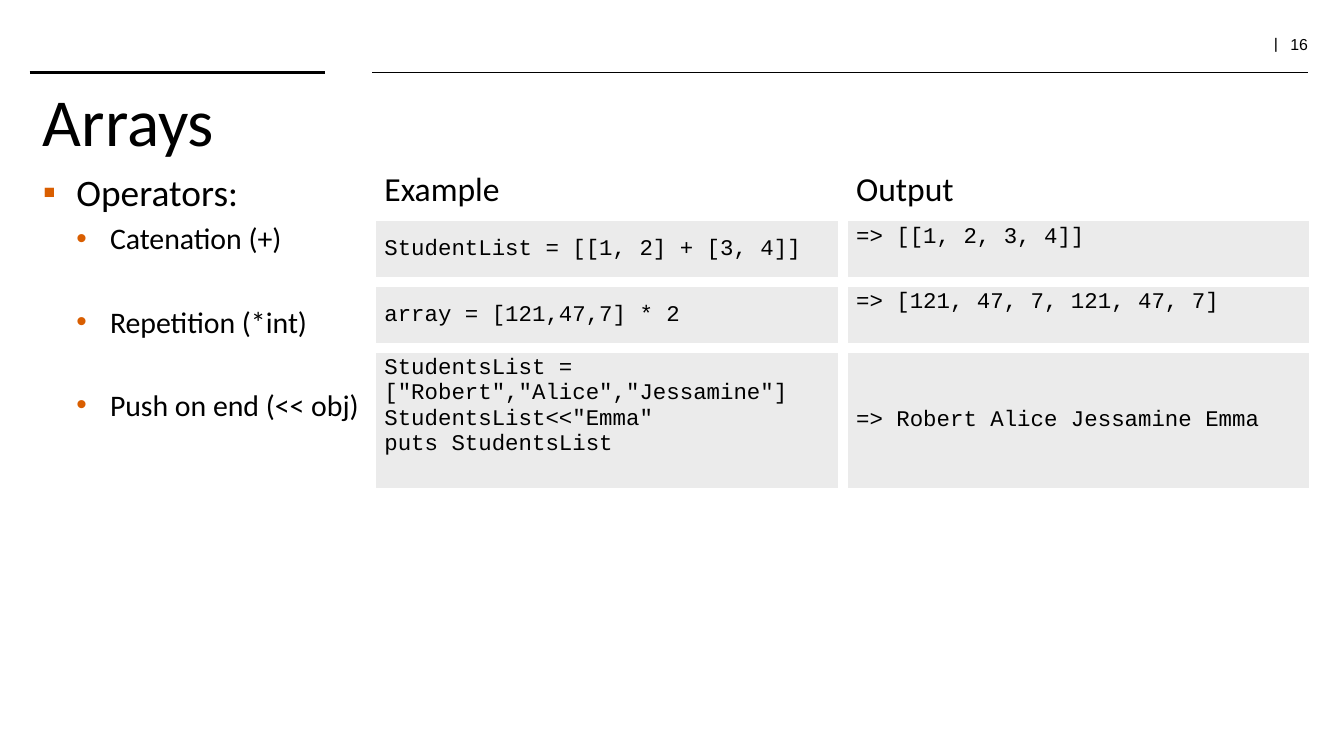
"""Build the slide on array operators."""
import pptx
import pptx.util
import pptx.dml.color
import pptx.enum.shapes
import pptx.enum.text
import pptx.oxml
import pptx.oxml.ns

Inches = pptx.util.Inches
Pt = pptx.util.Pt
Anchor = pptx.enum.text.MSO_ANCHOR
BLACK, WHITE, GREY, ORANGE = "000000", "FFFFFF", "EBEBEB", "D95E00"
BODY, CODE = "Calibri", "Courier New"
NS = pptx.oxml.ns.nsdecls("a")


def color(code):
    """Turn a hex string into a colour."""
    return pptx.dml.color.RGBColor.from_string(code)


def add_run(para, text, size, font=BODY):
    """Add one plain black run."""
    run = para.add_run()
    run.text = text
    run.font.size = Pt(size)
    run.font.name = font
    run.font.bold = False
    run.font.color.rgb = color(BLACK)


def add_box(slide, left, top, width, height):
    """Add a wrapping text box and return its text frame."""
    box = slide.shapes.add_textbox(*map(Inches, (left, top, width, height)))
    box.text_frame.word_wrap = True
    return box.text_frame


def add_rule(slide, left, right, top, width):
    """Draw a level black line."""
    line = slide.shapes.add_connector(
        pptx.enum.shapes.MSO_CONNECTOR.STRAIGHT,
        Inches(left), Inches(top), Inches(right), Inches(top))
    line.line.color.rgb = color(BLACK)
    line.line.width = Pt(width)
    props = line._element.spPr
    props.append(pptx.oxml.parse_xml(f"<a:effectLst {NS}/>"))


def add_bullet(para, text, level, mark, size, before):
    """Write a paragraph with a hanging orange bullet."""
    props = para._p.get_or_add_pPr()
    props.set("marL", str(Inches(0.25 * (level + 1))))
    props.set("indent", str(Inches(-0.25)))
    for xml in (f'<a:buClr {NS}><a:srgbClr val="{ORANGE}"/></a:buClr>',
                f'<a:buFont {NS} typeface="Arial"/>',
                f'<a:buChar {NS} char="{mark}"/>'):
        props.append(pptx.oxml.parse_xml(xml))
    para.level = level
    para.space_before = Pt(before)
    add_run(para, text, size)


def add_edges(cell):
    """Give a cell thick white borders on all sides."""
    props = cell._tc.get_or_add_tcPr()
    for spot, side in enumerate("LRTB"):
        props.insert(spot, pptx.oxml.parse_xml(
            f'<a:ln{side} {NS} w="{Pt(6)}"><a:solidFill>'
            f'<a:srgbClr val="{WHITE}"/></a:solidFill></a:ln{side}>'))


def fill_cell(cell, lines, head, anchor):
    """Write the lines of one table cell and style it."""
    cell.vertical_anchor = anchor
    if head:
        cell.fill.background()
    else:
        cell.fill.solid()
        cell.fill.fore_color.rgb = color(GREY)
        if anchor == Anchor.TOP:
            cell.margin_top = Inches(0.06)
    add_edges(cell)
    frame = cell.text_frame
    for spot, text in enumerate(lines):
        para = frame.add_paragraph() if spot else frame.paragraphs[0]
        add_run(para, text, 18 if head else 12, BODY if head else CODE)


def add_grid(slide):
    """Add the table of code samples and their output."""
    top, mid = Anchor.TOP, Anchor.MIDDLE
    rows = [
        (0.4, (["Example"], top), (["Output"], top)),
        (0.49, (["StudentList = [[1, 2] + [3, 4]]"], mid),
         (["=> [[1, 2, 3, 4]]"], top)),
        (0.49, (["array = [121,47,7] * 2"], mid),
         (["=> [121, 47, 7, 121, 47, 7]"], top)),
        (1.08, (['StudentsList = ["Robert","Alice","Jessamine"]',
                 'StudentsList<<"Emma"', "puts StudentsList"], top),
         (["=> Robert Alice Jessamine Emma"], mid)),
    ]
    table = slide.shapes.add_table(
        len(rows), 2, Inches(2.76), Inches(1.21),
        Inches(7.02), Inches(2.46)).table
    table.first_row = table.horz_banding = False
    for col in table.columns:
        col.width = Inches(3.51)
    for r, (height, *cells) in enumerate(rows):
        table.rows[r].height = Inches(height)
        for c, (lines, anchor) in enumerate(cells):
            fill_cell(table.cell(r, c), lines, r == 0, anchor)


def add_list(slide):
    """Add the bulleted list of operators."""
    frame = add_box(slide, 0.22, 1.21, 4.28, 3.67)
    add_bullet(frame.paragraphs[0], "Operators:", 0, "▪", 20, 0)
    items = ("Catenation (+)", "Repetition (*int)", "Push on end (<< obj)")
    for spot, text in enumerate(items):
        before = 25.5 if spot else 3.2
        add_bullet(frame.add_paragraph(), text, 1, "•", 16, before)


def main():
    """Build and save the slide."""
    deck = pptx.Presentation()
    deck.slide_width = Inches(10)
    deck.slide_height = Inches(10 * 9 / 16)
    slide = deck.slides.add_slide(deck.slide_layouts[6])
    page = add_box(slide, 8.81, 0.23, 1.02, 0.22).paragraphs[0]
    page.alignment = pptx.enum.text.PP_ALIGN.RIGHT
    page.line_spacing = 0.8
    add_run(page, "|  ", 9, "TeX Gyre Schola")
    add_run(page, "16", 8.5, "Arial")
    add_rule(slide, 0.22, 2.42, 0.54, 2)
    add_rule(slide, 2.77, 9.73, 0.54, 1)
    title = add_box(slide, 0.22, 0.54, 9.51, 0.57)
    add_run(title.paragraphs[0], "Arrays", 36)
    add_list(slide)
    add_grid(slide)
    deck.save("out.pptx")


if __name__ == "__main__":
    main()
